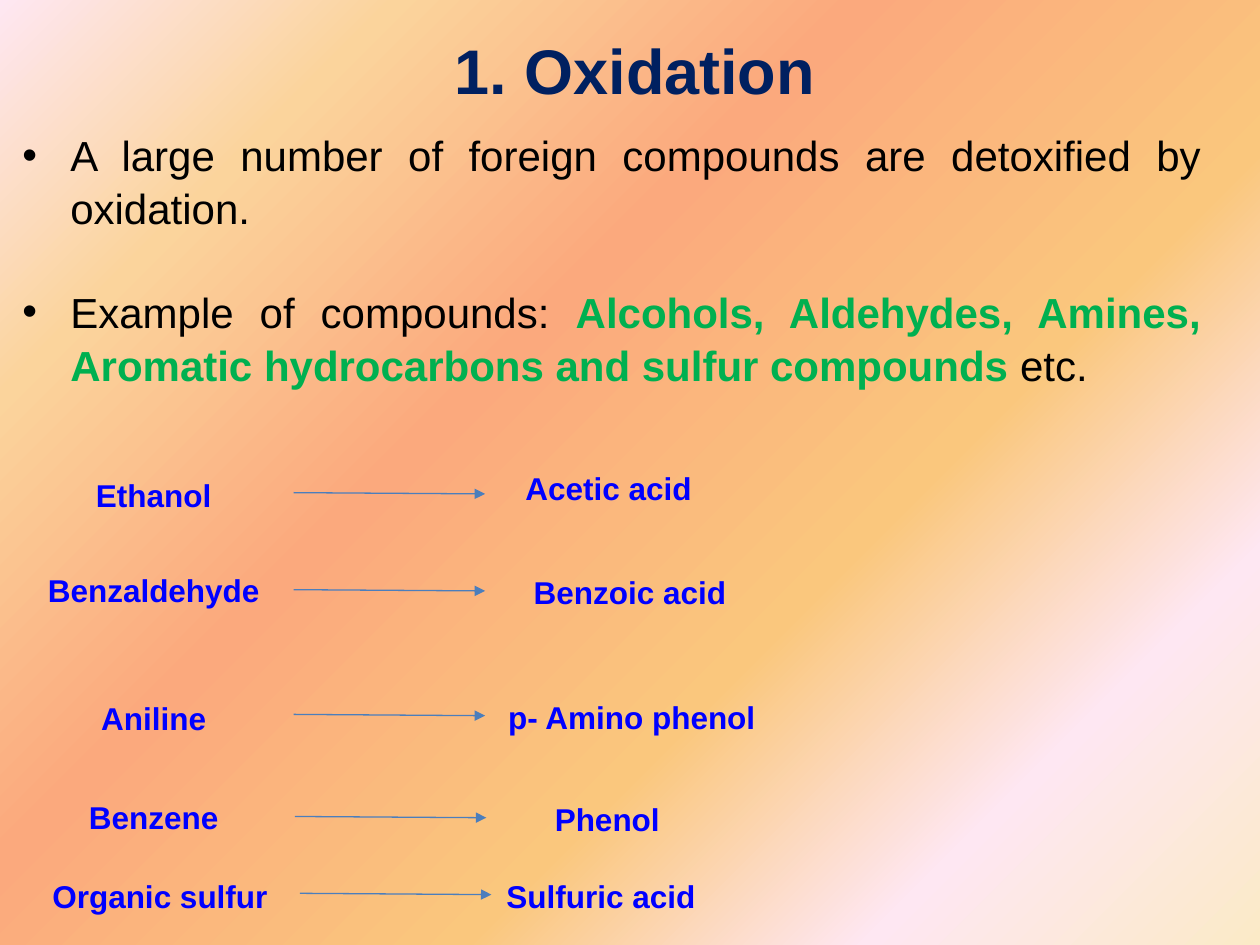
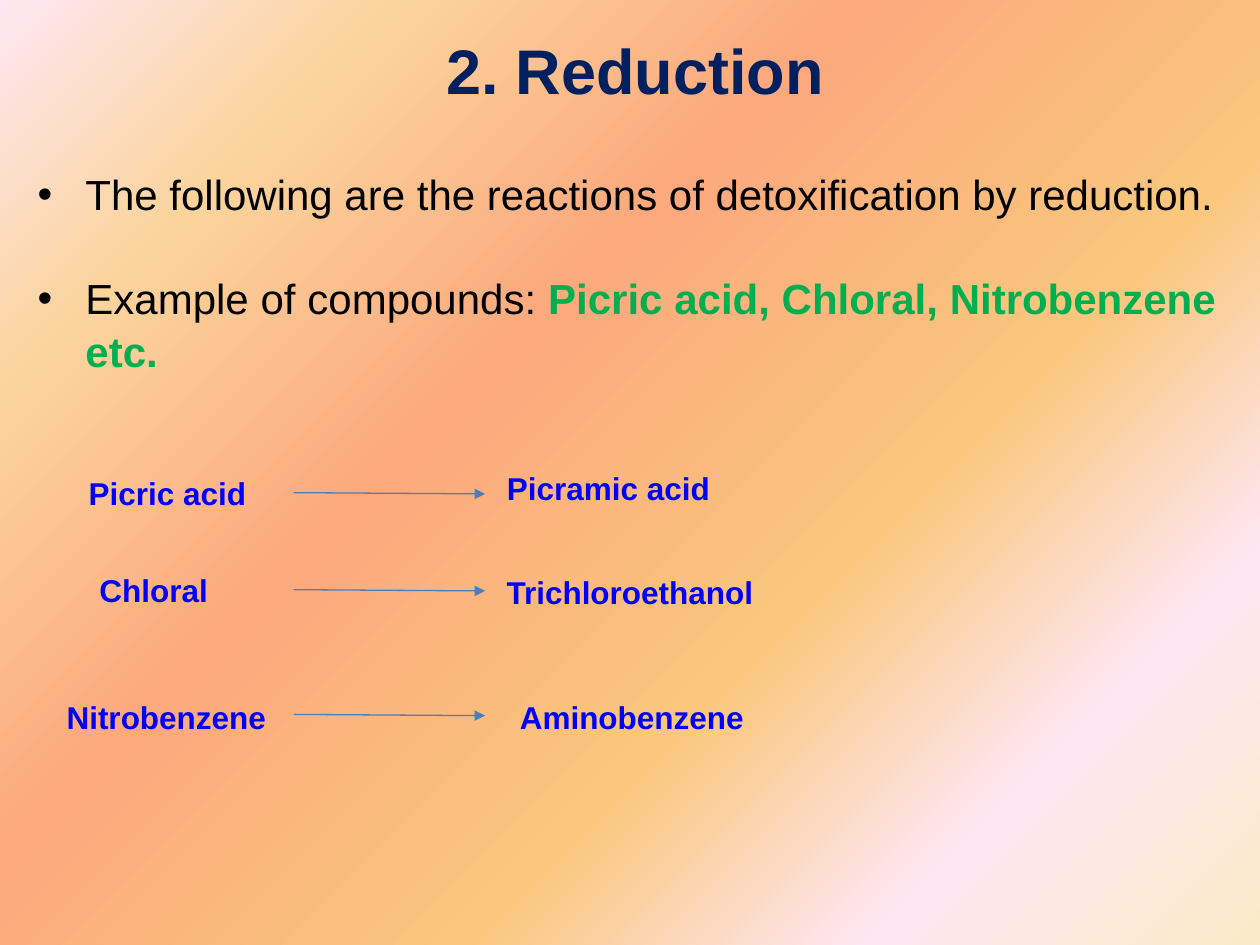
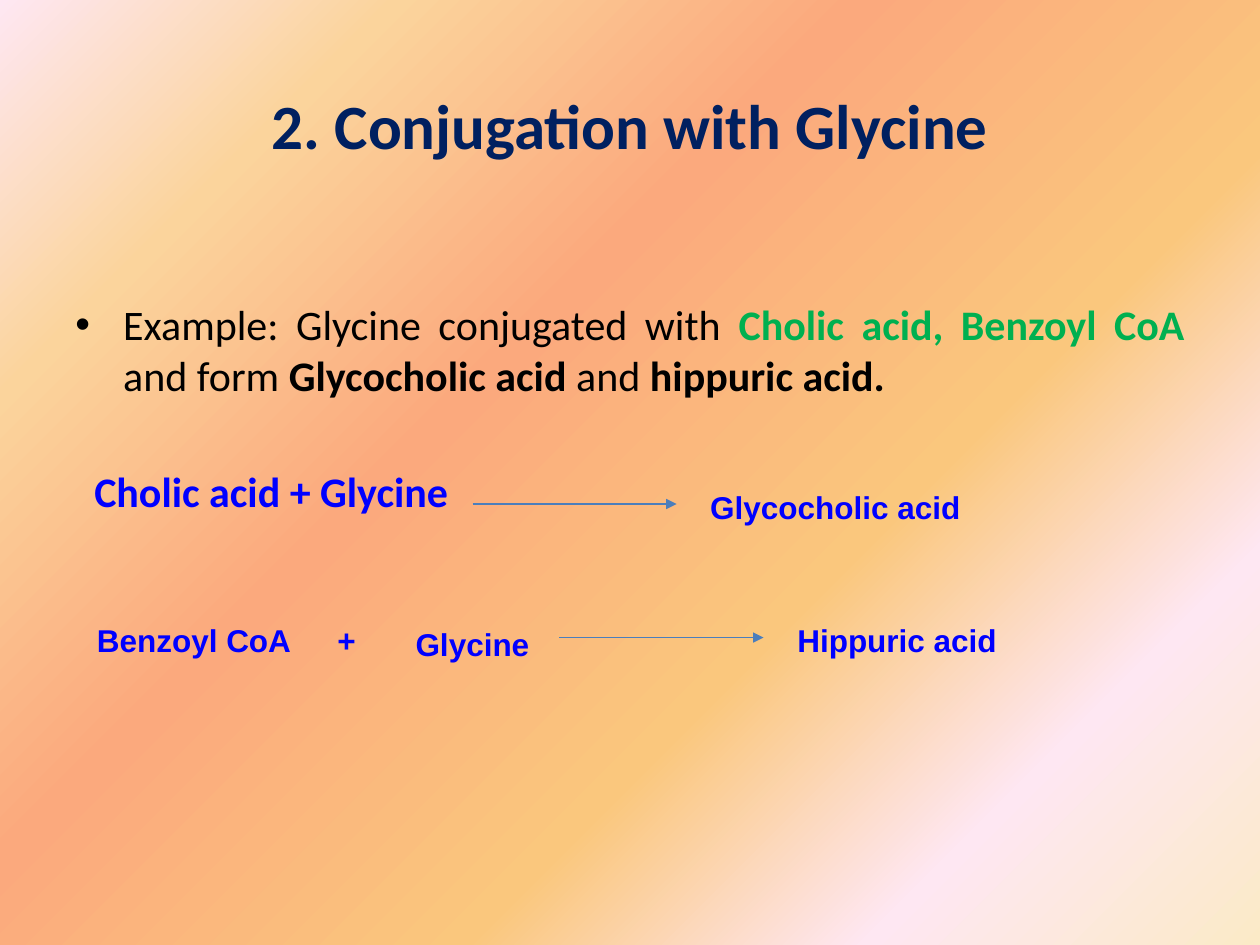
"""Build three slides on detoxification reactions."""
from dataclasses import dataclass

from pptx import Presentation
from pptx.dml.color import RGBColor
from pptx.enum.shapes import MSO_CONNECTOR
from pptx.enum.text import MSO_ANCHOR, MSO_AUTO_SIZE, PP_ALIGN
from pptx.oxml import parse_xml
from pptx.oxml.ns import nsdecls, qn
from pptx.oxml.xmlchemy import OxmlElement
from pptx.util import Emu, Pt


@dataclass(frozen=True)
class Theme:
    navy: str = "002060"
    black: str = "000000"
    green: str = "00B050"
    blue: str = "0000FF"
    arrow: str = "4B7EBC"
    title_size: int = 36
    body_size: int = 24
    label_size: int = 18
    arrow_width: float = 0.75
    label_font: str = "Arial"
    gradient: tuple = ((0, "FBEAC7"), (18, "FEE7F2"), (36, "FAC77D"),
                       (61, "FBA97D"), (82, "FBD49C"), (100, "FEE7F2"))


THEME = Theme()
PX = 9144
SLIDE_SIZE = (1000, 750)
HANGING = 38
LABEL_HEIGHT = 40
PLAIN = (THEME.black, False)
STRONG = (THEME.black, True)
KEY = (THEME.green, True)
REACTION = (THEME.blue, True)

TOP_TITLE = {"box": (33, 14, 942, 71), "inset": 11, "anchor": MSO_ANCHOR.TOP}
LOW_TITLE = {"box": (50, 65, 900, 67), "inset": 5, "anchor": MSO_ANCHOR.MIDDLE}

SLIDES = [
    {
        "title": "1. Oxidation", "title_place": TOP_TITLE, "font": "Arial",
        "body": {
            "box": (8, 56, 955, 252), "inset": 45, "line_spacing": 1.05, "gap": 29,
            "bullets": [
                [("A large number of foreign compounds are detoxified by oxidation.", PLAIN)],
                [("Example of compounds: ", PLAIN),
                 ("Alcohols, Aldehydes, Amines, Aromatic hydrocarbons and sulfur compounds ", KEY),
                 ("etc.", PLAIN)],
            ],
        },
        "labels": [
            ("Ethanol", 22, 371, 200), ("Acetic acid", 365, 365, 236),
            ("Benzaldehyde", 26, 446, 192), ("Benzoic acid", 385, 448, 230),
            ("Aniline", 26, 548, 192), ("p- Amino phenol", 388, 547, 227),
            ("Benzene", 26, 626, 192), ("Phenol", 386, 628, 192),
            ("Organic sulfur", 31, 689, 192), ("Sulfuric acid", 381, 689, 192),
        ],
        "arrows": [(233, 391), (233, 468), (233, 567), (234, 648), (238, 709)],
        "arrow_reach": (152, 1),
    },
    {
        "title": "2. Reduction", "title_place": TOP_TITLE, "font": "Arial",
        "body": {
            "box": (20, 87, 955, 212), "inset": 45, "line_spacing": 1.05, "gap": 29,
            "bullets": [
                [("The following are the reactions of detoxification by reduction.", PLAIN)],
                [("Example of compounds: ", PLAIN),
                 ("Picric acid, Chloral, Nitrobenzene etc.", KEY)],
            ],
        },
        "labels": [
            ("Picric acid", 33, 369, 200), ("Picramic acid", 365, 365, 236),
            ("Chloral", 26, 446, 192), ("Trichloroethanol", 385, 448, 230),
            ("Nitrobenzene", 36, 547, 192), ("Aminobenzene", 388, 547, 227),
        ],
        "arrows": [(233, 391), (233, 468), (233, 567)],
        "arrow_reach": (152, 1),
    },
    {
        "title": "2. Conjugation with Glycine", "title_place": LOW_TITLE, "font": "Calibri",
        "body": {
            "box": (50, 184, 900, 308), "inset": 53, "line_spacing": 1.0, "gap": 38,
            "bullets": [
                [("Example: Glycine conjugated with ", PLAIN),
                 ("Cholic acid, Benzoyl CoA ", KEY), ("and form ", PLAIN),
                 ("Glycocholic acid ", STRONG), ("and ", PLAIN), ("hippuric acid.", STRONG)],
            ],
            "closing": ("Cholic acid + Glycine", 15),
        },
        "labels": [
            ("Glycocholic acid", 548, 380, 230),
            ("Benzoyl CoA", 54, 486, 200), ("+", 175, 486, 200),
            ("Glycine", 275, 489, 200), ("Hippuric acid", 583, 486, 258),
        ],
        "arrows": [(375, 400), (444, 506)],
        "arrow_reach": (162, 0),
    },
]


def px(lengths):
    return [Emu(length * PX) for length in lengths]


def add_run(paragraph, text, style, size, font):
    color, bold = style
    run = paragraph.add_run()
    run.text = text
    run.font.name = font
    run.font.size = Pt(size)
    run.font.bold = bold
    run.font.color.rgb = RGBColor.from_string(color)


def prepare_frame(shape, inset, anchor=MSO_ANCHOR.TOP):
    frame = shape.text_frame
    frame.word_wrap = True
    frame.auto_size = MSO_AUTO_SIZE.NONE
    frame.vertical_anchor = anchor
    frame.margin_top = Emu(inset * PX)
    return frame


def set_indent(paragraph, left, bullet=False):
    properties = paragraph._p.get_or_add_pPr()
    properties.set("marL", str(left * PX))
    properties.set("indent", str(-left * PX if bullet else 0))
    if bullet:
        for tag, key, value in (("a:buFont", "typeface", THEME.label_font),
                                ("a:buChar", "char", "•")):
            element = OxmlElement(tag)
            element.set(key, value)
            properties.append(element)


def paint_background(master):
    master.background.fill.gradient()
    default = master.element.find(".//" + qn("p:bgPr")).find(qn("a:gradFill"))
    stops = "".join(
        f'<a:gs pos="{position * 1000}"><a:srgbClr val="{color}"/></a:gs>'
        for position, color in THEME.gradient)
    gradient = parse_xml(
        f'<a:gradFill {nsdecls("a")} rotWithShape="1"><a:gsLst>{stops}</a:gsLst>'
        '<a:path path="circle"><a:fillToRect l="100000" t="100000"/></a:path>'
        '<a:tileRect r="-100000" b="-100000"/></a:gradFill>')
    default.getparent().replace(default, gradient)


def set_title(slide, text, place, font):
    title = slide.shapes.title
    title.left, title.top, title.width, title.height = px(place["box"])
    paragraph = prepare_frame(title, place["inset"], place["anchor"]).paragraphs[0]
    paragraph.alignment = PP_ALIGN.CENTER
    add_run(paragraph, text, (THEME.navy, True), THEME.title_size, font)


def add_body(slide, body, font):
    frame = prepare_frame(slide.shapes.add_textbox(*px(body["box"])), body["inset"])
    for index, runs in enumerate(body["bullets"]):
        paragraph = frame.add_paragraph() if index else frame.paragraphs[0]
        paragraph.alignment = PP_ALIGN.JUSTIFY
        paragraph.line_spacing = body["line_spacing"]
        paragraph.space_before = Pt(body["gap"] if index else 0)
        set_indent(paragraph, HANGING, bullet=True)
        for text, style in runs:
            add_run(paragraph, text, style, THEME.body_size, font)
    if "closing" in body:
        text, left = body["closing"]
        paragraph = frame.add_paragraph()
        paragraph.space_before = Pt(body["gap"])
        set_indent(paragraph, left)
        add_run(paragraph, text, REACTION, THEME.body_size, font)


def add_label(slide, text, left, top, width):
    box = slide.shapes.add_textbox(*px((left, top, width, LABEL_HEIGHT)))
    paragraph = prepare_frame(box, 7).paragraphs[0]
    paragraph.alignment = PP_ALIGN.CENTER
    add_run(paragraph, text, REACTION, THEME.label_size, THEME.label_font)


def add_arrow(slide, x, y, reach):
    ends = px((x, y, x + reach[0], y + reach[1]))
    connector = slide.shapes.add_connector(MSO_CONNECTOR.STRAIGHT, *ends)
    connector.line.color.rgb = RGBColor.from_string(THEME.arrow)
    connector.line.width = Pt(THEME.arrow_width)
    head = OxmlElement("a:tailEnd")
    head.set("type", "triangle")
    connector.line._get_or_add_ln().append(head)
    connector._element.spPr.append(OxmlElement("a:effectLst"))


def main():
    presentation = Presentation()
    presentation.slide_width, presentation.slide_height = px(SLIDE_SIZE)
    paint_background(presentation.slide_master)
    title_only = presentation.slide_layouts.get_by_name("Title Only")
    for content in SLIDES:
        slide = presentation.slides.add_slide(title_only)
        set_title(slide, content["title"], content["title_place"], content["font"])
        add_body(slide, content["body"], content["font"])
        for label in content["labels"]:
            add_label(slide, *label)
        for x, y in content["arrows"]:
            add_arrow(slide, x, y, content["arrow_reach"])
    presentation.save("out.pptx")


if __name__ == "__main__":
    main()
